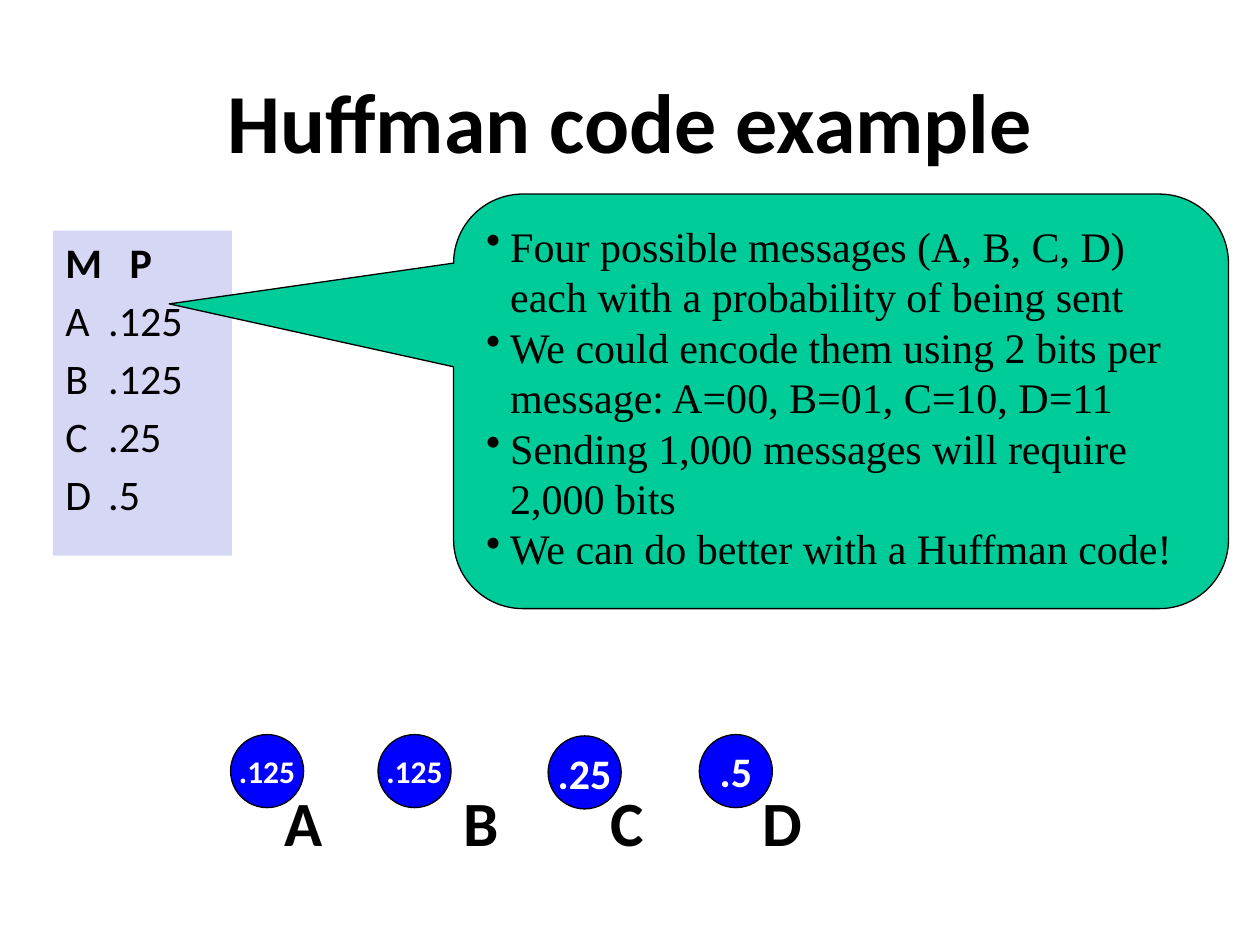
from dataclasses import dataclass

from lxml.etree import SubElement
from pptx import Presentation
from pptx.dml.color import RGBColor
from pptx.enum.shapes import MSO_SHAPE
from pptx.enum.text import MSO_ANCHOR, PP_ALIGN
from pptx.oxml.ns import qn
from pptx.shapes.autoshape import Shape
from pptx.slide import Slide
from pptx.text.text import _Paragraph as Paragraph
from pptx.util import Emu, Pt

EMU_PER_PX = 9144  # 100 px to the inch


@dataclass(frozen=True)
class Theme:
    black: RGBColor = RGBColor(0x00, 0x00, 0x00)
    white: RGBColor = RGBColor(0xFF, 0xFF, 0xFF)
    table_fill: RGBColor = RGBColor(0xD6, 0xD6, 0xF5)
    callout_fill: RGBColor = RGBColor(0x00, 0xCC, 0x99)
    node_fill: RGBColor = RGBColor(0x00, 0x00, 0xFF)
    sans: str = "Calibri"
    serif: str = "Times New Roman"
    title_size: int = 48
    letter_size: int = 36
    body_size: int = 24
    small_size: int = 18
    outline: float = 0.75


@dataclass(frozen=True)
class Box:
    left: int
    top: int
    width: int
    height: int

    def emu(self) -> tuple[Emu, Emu, Emu, Emu]:
        return (px(self.left), px(self.top), px(self.width), px(self.height))


@dataclass(frozen=True)
class Leaf:
    """A tree leaf: its probability circle and its message letter."""
    message: str
    probability: str
    size: int
    circle: Box
    letter: Box


THEME = Theme()

LEAVES = [
    Leaf("A", ".125", THEME.small_size, Box(183, 583, 58, 58), Box(216, 617, 51, 71)),
    Leaf("B", ".125", THEME.small_size, Box(300, 583, 58, 58), Box(358, 617, 48, 71)),
    Leaf("C", ".25", THEME.body_size, Box(435, 584, 58, 58), Box(475, 617, 47, 71)),
    Leaf("D", ".5", THEME.body_size, Box(555, 583, 58, 58), Box(595, 617, 52, 71)),
]

CALLOUT_POINTS = [
    "Four possible messages (A, B, C, D) each with a probability of being sent",
    "We could encode them using 2 bits per message: A=00, B=01, C=10, D=11",
    "Sending 1,000 messages will require 2,000 bits",
    "We can do better with a Huffman code!",
]


def px(length: int) -> Emu:
    return Emu(length * EMU_PER_PX)


def add_run(paragraph: Paragraph, text: str, size: int, color: RGBColor = THEME.black,
            bold: bool = True, font: str = THEME.sans) -> None:
    run = paragraph.add_run()
    run.text = text
    run.font.size = Pt(size)
    run.font.name = font
    run.font.bold = bold
    run.font.color.rgb = color


def next_paragraph(shape: Shape, index: int) -> Paragraph:
    """Use the paragraph a new shape already has, then add more."""
    frame = shape.text_frame
    paragraph = frame.add_paragraph() if index else frame.paragraphs[0]
    paragraph.alignment = PP_ALIGN.LEFT
    return paragraph


def set_tab_stop(paragraph: Paragraph, position: int) -> None:
    tabs = SubElement(paragraph._p.get_or_add_pPr(), qn("a:tabLst"))
    SubElement(tabs, qn("a:tab"), pos=str(px(position)), algn="l")


def set_bullet(paragraph: Paragraph, indent: int) -> None:
    properties = paragraph._p.get_or_add_pPr()
    properties.set("marL", str(px(indent)))
    properties.set("indent", str(-px(indent)))
    SubElement(properties, qn("a:buChar"), char="•")


def add_filled_shape(slide: Slide, kind: MSO_SHAPE, box: Box, fill: RGBColor,
                     outlined: bool = True) -> Shape:
    shape = slide.shapes.add_shape(kind, *box.emu())
    shape.shadow.inherit = False
    shape.fill.solid()
    shape.fill.fore_color.rgb = fill
    if outlined:
        shape.line.color.rgb = THEME.black
        shape.line.width = Pt(THEME.outline)
    else:
        shape.line.fill.background()
    return shape


def format_title(slide: Slide) -> None:
    title = slide.shapes.title
    title.left, title.top, title.width, title.height = Box(75, 33, 850, 125).emu()
    title.text_frame.vertical_anchor = MSO_ANCHOR.MIDDLE
    paragraph = title.text_frame.paragraphs[0]
    paragraph.alignment = PP_ALIGN.CENTER
    add_run(paragraph, "Huffman code example", THEME.title_size)


def add_probability_list(slide: Slide) -> None:
    panel = add_filled_shape(slide, MSO_SHAPE.RECTANGLE, Box(42, 183, 142, 258),
                             THEME.table_fill, outlined=False)
    panel.text_frame.vertical_anchor = MSO_ANCHOR.TOP
    rows = [("M", "P")] + [(leaf.message, leaf.probability) for leaf in LEAVES]
    for index, (message, probability) in enumerate(rows):
        is_header = index == 0
        paragraph = next_paragraph(panel, index)
        paragraph.space_before = Pt(4.3)
        set_tab_stop(paragraph, 51 if is_header else 34)
        add_run(paragraph, f"{message}\t{probability}", THEME.body_size, bold=is_header)


def add_callout(slide: Slide) -> None:
    callout = add_filled_shape(slide, MSO_SHAPE.ROUNDED_RECTANGULAR_CALLOUT,
                               Box(360, 154, 615, 329), THEME.callout_fill)
    for index, value in enumerate((-0.867, -0.235, 0.167)):
        callout.adjustments[index] = value
    callout.text_frame.vertical_anchor = MSO_ANCHOR.TOP
    callout.text_frame.word_wrap = True
    for index, point in enumerate(CALLOUT_POINTS):
        paragraph = next_paragraph(callout, index)
        set_bullet(paragraph, 19)
        add_run(paragraph, point, THEME.body_size, bold=False, font=THEME.serif)


def add_leaf(slide: Slide, leaf: Leaf) -> None:
    circle = add_filled_shape(slide, MSO_SHAPE.OVAL, leaf.circle, THEME.node_fill)
    circle.text_frame.word_wrap = False
    circle.text_frame.vertical_anchor = MSO_ANCHOR.MIDDLE
    paragraph = circle.text_frame.paragraphs[0]
    paragraph.alignment = PP_ALIGN.CENTER
    add_run(paragraph, leaf.probability, leaf.size, THEME.white)

    letter = slide.shapes.add_textbox(*leaf.letter.emu())
    letter.text_frame.word_wrap = False
    add_run(letter.text_frame.paragraphs[0], leaf.message, THEME.letter_size)


def main() -> None:
    presentation = Presentation()
    presentation.slide_width = px(1000)
    presentation.slide_height = px(750)
    title_only = presentation.slide_layouts.get_by_name("Title Only")
    slide = presentation.slides.add_slide(title_only)
    format_title(slide)
    add_probability_list(slide)
    add_callout(slide)
    for leaf in LEAVES:
        add_leaf(slide, leaf)
    presentation.save("out.pptx")


if __name__ == "__main__":
    main()
